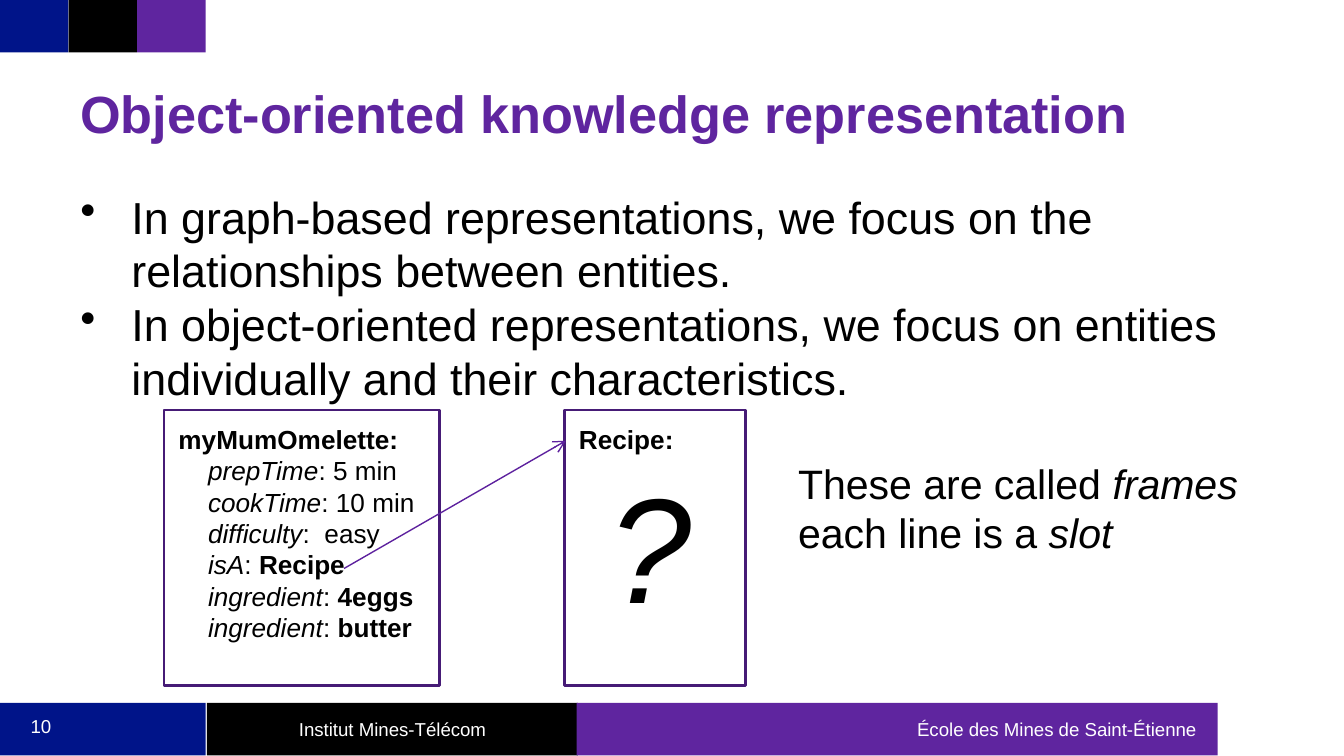
import dataclasses

import lxml.etree
import pptx
import pptx.dml.color
import pptx.enum.shapes
import pptx.enum.text
import pptx.oxml
import pptx.oxml.ns
import pptx.util

Inches = pptx.util.Inches
Align = pptx.enum.text.PP_ALIGN
Anchor = pptx.enum.text.MSO_ANCHOR


@dataclasses.dataclass(frozen=True)
class Theme:
    font: str = "Arial"
    blue: str = "001489"
    black: str = "000000"
    purple: str = "5F259F"
    outline: str = "461B76"
    arrow: str = "5D219E"
    white: str = "FFFFFF"
    title: int = 28
    body: int = 24
    remark: int = 22
    slot: int = 14
    mark: int = 80
    footer: int = 10


class SlideBuilder:
    """Draws themed elements on one slide."""

    def __init__(self, slide, theme):
        self.slide = slide
        self.theme = theme

    def color(self, value):
        return pptx.dml.color.RGBColor.from_string(value)

    def apply(self, target, values):
        for name, value in values.items():
            setattr(target, name, value)

    def frame_text(self, shape, inset=0.1, side=0.1, right=0.1, anchor=Anchor.TOP):
        self.apply(shape.text_frame, {
            "word_wrap": True,
            "vertical_anchor": anchor,
            "margin_left": Inches(side),
            "margin_top": Inches(inset),
            "margin_right": Inches(right),
            "margin_bottom": Inches(inset),
        })
        return shape.text_frame

    def paragraph(self, frame, runs, size, color=None, align=Align.LEFT,
                  left=0, hanging=0, bullet=None, before=0):
        first = frame.paragraphs[0]
        paragraph = first if not first.runs else frame.add_paragraph()
        properties = paragraph._p.get_or_add_pPr()
        properties.set("marL", str(Inches(left)))
        properties.set("indent", str(Inches(-hanging)))
        if bullet:
            element = lxml.etree.SubElement(properties, pptx.oxml.ns.qn("a:buChar"))
            element.set("char", bullet)
        self.apply(paragraph, {
            "alignment": align,
            "space_before": pptx.util.Pt(before),
            "line_spacing": 1.0,
        })
        for text, style in runs:
            run = paragraph.add_run()
            run.text = text
            self.apply(run.font, {
                "name": self.theme.font,
                "size": pptx.util.Pt(size),
                "bold": "b" in style,
                "italic": "i" in style,
            })
            run.font.color.rgb = self.color(color or self.theme.black)

    def textbox(self, left, top, width, height, anchor=Anchor.TOP):
        box = self.slide.shapes.add_textbox(*map(Inches, (left, top, width, height)))
        return self.frame_text(box, anchor=anchor)

    def rectangle(self, left, top, width, height, fill=None, line=None):
        shape = self.slide.shapes.add_shape(
            pptx.enum.shapes.MSO_SHAPE.RECTANGLE,
            *map(Inches, (left, top, width, height)))
        shape.shadow.inherit = False
        if fill:
            shape.fill.solid()
            shape.fill.fore_color.rgb = self.color(fill)
        else:
            shape.fill.background()
        if line:
            shape.line.color.rgb = self.color(line)
            shape.line.width = pptx.util.Pt(1.5)
        else:
            shape.line.fill.background()
        return shape

    def footer(self, left, width, fill, text=None, align=Align.CENTER, right=0.1):
        shape = self.rectangle(left, 5.23, width, 0.39, fill)
        if text:
            frame = self.frame_text(shape, 0.05, 0.1, right, Anchor.MIDDLE)
            self.paragraph(frame, [(text, "")], self.theme.footer,
                           self.theme.white, align)

    def knowledge_frame(self, left, width, name):
        self.rectangle(left, 3.05, width, 2.05, line=self.theme.outline)
        frame = self.textbox(left + 0.01, 3.05, width - 0.01, 2.04)
        self.paragraph(frame, [(name, "b")], self.theme.slot)
        return frame

    def arrow(self, start, end):
        connector = self.slide.shapes.add_connector(
            pptx.enum.shapes.MSO_CONNECTOR.STRAIGHT, *map(Inches, start + end))
        connector.line.color.rgb = self.color(self.theme.arrow)
        connector.line.width = pptx.util.Pt(0.75)
        head = lxml.etree.SubElement(
            connector.line._get_or_add_ln(), pptx.oxml.ns.qn("a:tailEnd"))
        head.set("type", "arrow")
        lxml.etree.SubElement(
            connector._element.spPr, pptx.oxml.ns.qn("a:effectLst"))


def main():
    theme = Theme()
    presentation = pptx.Presentation()
    presentation.slide_width = Inches(10)
    presentation.slide_height = Inches(10) * 9 // 16
    slide = presentation.slides.add_slide(presentation.slide_layouts[6])
    builder = SlideBuilder(slide, theme)

    for index, fill in enumerate((theme.blue, theme.black, theme.purple)):
        builder.rectangle(index * 0.51, 0, 0.51, 0.39, fill)
    builder.footer(1.54, 2.76, theme.black, "Institut Mines-Télécom")
    builder.footer(0, 1.53, theme.blue)
    builder.footer(4.29, 4.77, theme.purple, "École des Mines de Saint-Étienne",
                   Align.RIGHT, 0.16)

    body = builder.textbox(0.5, 1.31, 9, 4.07)
    for text in (
        "In graph-based representations, we focus on the relationships between entities.",
        "In object-oriented representations, we focus on entities individually "
        "and their characteristics.",
    ):
        builder.paragraph(body, [(text, "")], theme.body,
                          left=0.38, hanging=0.38, bullet="•")
    for text, term, before in (("These are called ", "frames", 28.8),
                               ("each line is a ", "slot", 0)):
        builder.paragraph(body, [(text, ""), (term, "i")], theme.remark,
                          left=5.34, before=before)

    number = builder.textbox(0.01, 5.19, 0.59, 0.43, Anchor.MIDDLE)
    builder.paragraph(number, [("10", "")], theme.footer, theme.white, Align.CENTER)
    title = builder.textbox(0.5, 0.23, 9, 0.94, Anchor.BOTTOM)
    builder.paragraph(title, [("Object-oriented knowledge representation", "b")],
                      theme.title, theme.purple)

    omelette = builder.knowledge_frame(1.22, 2.05, "myMumOmelette:")
    for slot, separator, value, style in (
        ("prepTime", ": ", "5 min", ""),
        ("cookTime", ": ", "10 min", ""),
        ("difficulty", ":  ", "easy", ""),
        ("isA", ": ", "Recipe", "b"),
        ("ingredient", ": ", "4eggs", "b"),
        ("ingredient", ": ", "butter", "b"),
    ):
        builder.paragraph(omelette, [(slot, "i"), (separator, ""), (value, style)],
                          theme.slot, left=0.22)

    recipe = builder.knowledge_frame(4.2, 1.35, "Recipe:")
    builder.paragraph(recipe, [("?", "i")], theme.mark, left=0.22)
    builder.arrow((2.56, 4.23), (4.21, 3.28))

    presentation.save("out.pptx")


if __name__ == "__main__":
    main()
